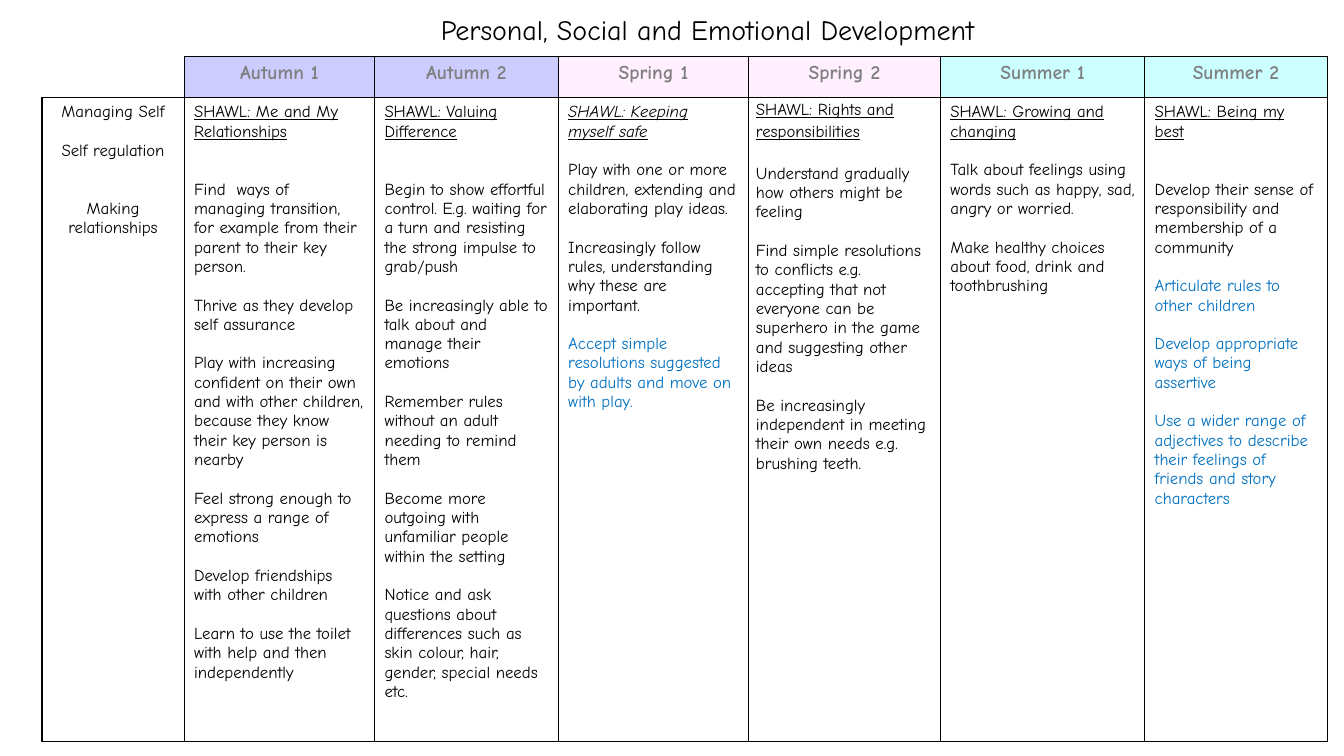
"""Builds a one-slide curriculum plan for personal, social and emotional development."""
from lxml.etree import SubElement
from pptx import Presentation
from pptx.dml.color import RGBColor
from pptx.enum.text import MSO_ANCHOR as Anchor, MSO_AUTO_SIZE as Fit, PP_ALIGN as Align
from pptx.oxml.ns import qn
from pptx.util import Cm, Pt

FONT = "Comic Neue"
BLACK, GREY, BLUE, WHITE = "000000", "808080", "0070C0", "FFFFFF"
LINE = 13.8
TITLE = "Personal, Social and Emotional Development"
AREAS = ["Managing Self", "Self regulation", "Making relationships"]
TERMS = [
    dict(name="Autumn 1", fill="CCCCFF", topic="SHAWL: Me and My Relationships", gap=2, goals=[
        "Find  ways of managing transition, for example from their parent to their key person.",
        "Thrive as they develop self assurance",
        "Play with increasing confident on their own and with other children, "
        "because they know their key person is nearby",
        "Feel strong enough to express a range of emotions",
        "Develop friendships with other children",
        "Learn to use the toilet with help and then independently"]),
    dict(name="Autumn 2", fill="CCCCFF", topic="SHAWL: Valuing Difference", gap=2, goals=[
        "Begin to show effortful control. E.g. waiting for a turn and resisting "
        "the strong impulse to grab/push",
        "Be increasingly able to talk about and manage their emotions",
        "Remember rules without an adult needing to remind them",
        "Become more outgoing with unfamiliar people within the setting",
        "Notice and ask questions about differences such as skin colour, hair, "
        "gender, special needs etc."]),
    dict(name="Spring 1", fill="FFEFFF", topic="SHAWL: Keeping myself safe", italic=True, goals=[
        "Play with one or more children, extending and elaborating play ideas.",
        "Increasingly follow rules, understanding why these are important."],
        extra=["Accept simple resolutions suggested by adults and move on with play."]),
    dict(name="Spring 2", fill="FFEFFF", topic="SHAWL: Rights and responsibilities",
         gap=1.15, lead=1.15, inset=(0.18, 0), goals=[
        "Understand gradually how others might be feeling",
        "Find simple resolutions to conflicts e.g. accepting that not everyone can be "
        "superhero in the game and suggesting other ideas",
        "Be increasingly independent in meeting their own needs e.g. brushing teeth."]),
    dict(name="Summer 1", fill="CCFFFF", topic="SHAWL: Growing and changing", goals=[
        "Talk about feelings using words such as happy, sad, angry or worried.",
        "Make healthy choices about food, drink and toothbrushing"]),
    dict(name="Summer 2", fill="CCFFFF", topic="SHAWL: Being my best", gap=2, goals=[
        "Develop their sense of responsibility and membership of a community"],
        extra=["Articulate rules to other children",
               "Develop appropriate ways of being assertive",
               "Use a wider range of adjectives to describe their feelings of friends "
               "and story characters"]),
]
WIDTHS = [3.58, 4.8, 4.63, 4.8, 4.83, 5.15, 4.6]
HEIGHTS = [1.02, 16.23]


def tint(hue):
    return RGBColor.from_string(hue)


def write(frame, text, size=12, hue=BLACK, align=Align.LEFT, gap=0, lead=1.0,
          bold=False, italic=False, under=False):
    para = frame.paragraphs[0]
    if para.runs:
        para = frame.add_paragraph()
    para.alignment, para.line_spacing = align, lead
    para.space_before, para.space_after = Pt(gap * LINE), Pt(0)
    run = para.add_run()
    run.text = text
    font = run.font
    font.name, font.size, font.color.rgb = FONT, Pt(size), tint(hue)
    font.bold, font.italic, font.underline = bold, italic, under


def paint(cell, fill, sides="LRTB", inset=(0.25, 0.13)):
    props = cell._tc.get_or_add_tcPr()
    for side in "LRTB":
        edge = SubElement(props, qn(f"a:ln{side}"), w=str(Pt(1)))
        if side in sides:
            solid = SubElement(edge, qn("a:solidFill"))
            SubElement(solid, qn("a:srgbClr"), val=BLACK)
        else:
            SubElement(edge, qn("a:noFill"))
    cell.fill.solid()
    cell.fill.fore_color.rgb = tint(fill)
    cell.vertical_anchor = Anchor.TOP
    cell.margin_left = cell.margin_right = Cm(inset[0])
    cell.margin_top = cell.margin_bottom = Cm(inset[1])
    return cell.text_frame


def main():
    deck = Presentation()
    deck.slide_width, deck.slide_height = Cm(33.87), Cm(19.05)
    slide = deck.slides.add_slide(deck.slide_layouts[5])

    title = slide.shapes.title
    title.left, title.top, title.width, title.height = Cm(3.23), Cm(-2.39), Cm(29.21), Cm(3.68)
    frame = title.text_frame
    frame.auto_size, frame.word_wrap = Fit.NONE, True
    frame.vertical_anchor = Anchor.BOTTOM
    write(frame, TITLE, size=20, align=Align.CENTER, lead=0.9)

    grid = slide.shapes.add_table(2, len(WIDTHS), Cm(1.06), Cm(1.42),
                                  Cm(sum(WIDTHS)), Cm(sum(HEIGHTS))).table
    grid.first_row = grid.horz_banding = False
    for col, width in zip(grid.columns, WIDTHS):
        col.width = Cm(width)
    for row, height in zip(grid.rows, HEIGHTS):
        row.height = Cm(height)

    paint(grid.cell(0, 0), WHITE, sides="RB")
    frame = paint(grid.cell(1, 0), WHITE)
    for gap, area in enumerate(AREAS):
        write(frame, area, align=Align.CENTER, gap=gap)

    for col, term in enumerate(TERMS, 1):
        head = paint(grid.cell(0, col), term["fill"])
        write(head, term["name"], size=14, hue=GREY, align=Align.CENTER, bold=True)
        body = paint(grid.cell(1, col), WHITE, inset=term.get("inset", (0.25, 0.13)))
        write(body, term["topic"], under=True, italic=term.get("italic", False),
              lead=term.get("lead", 1.0))
        gap = term.get("gap", 1)
        for hue, key in ((BLACK, "goals"), (BLUE, "extra")):
            for goal in term.get(key, []):
                write(body, goal, hue=hue, gap=gap)
                gap = 1

    deck.save("out.pptx")


if __name__ == "__main__":
    main()
